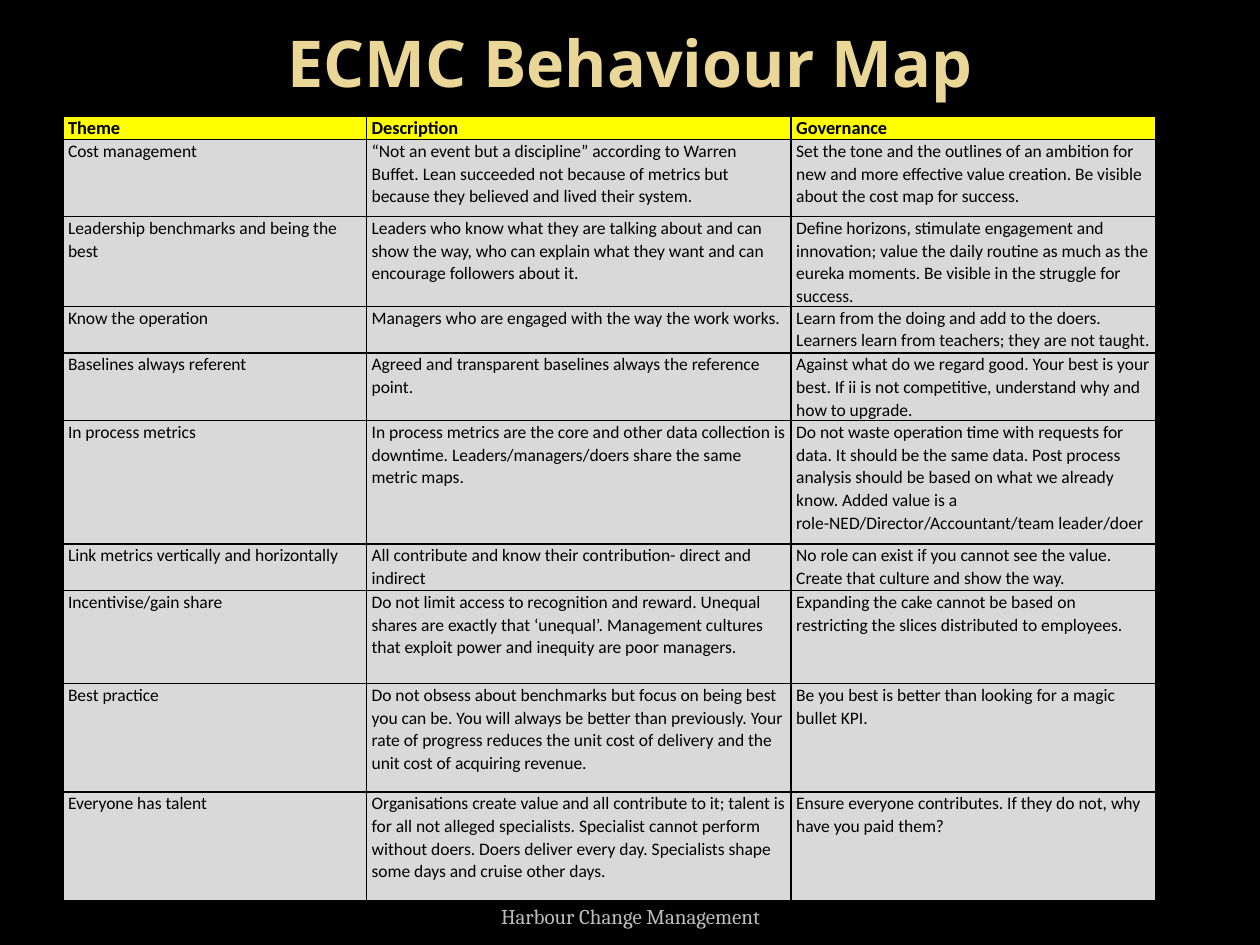
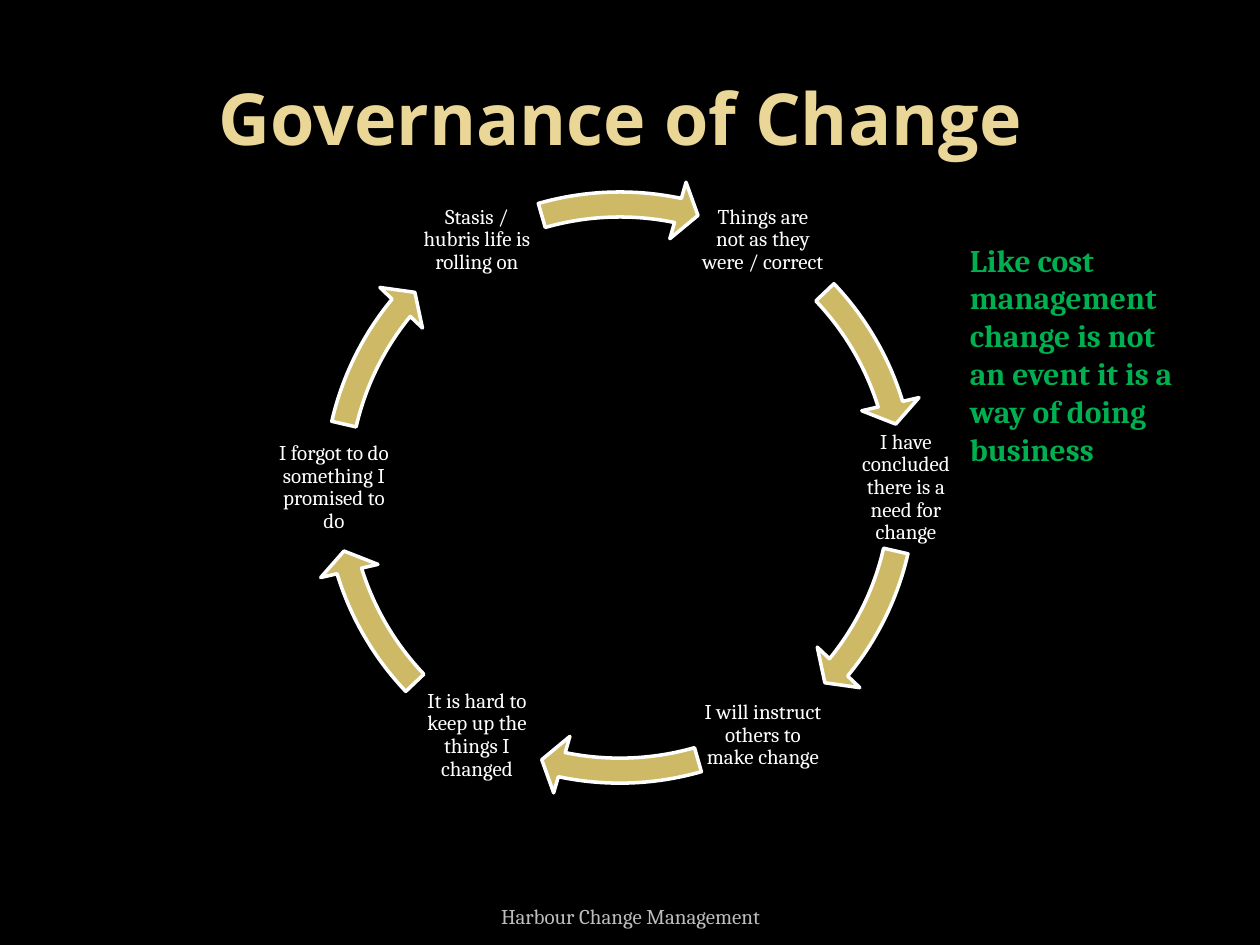
from math import cos, radians, sin

from lxml import etree
from pptx import Presentation
from pptx.dml.color import RGBColor
from pptx.enum.shapes import MSO_SHAPE
from pptx.enum.text import MSO_ANCHOR, PP_ALIGN
from pptx.oxml.ns import qn
from pptx.util import Inches, Pt

CIRCULAR_ARROW = MSO_SHAPE.CIRCULAR_ARROW
TOP, MIDDLE, BOTTOM = MSO_ANCHOR.TOP, MSO_ANCHOR.MIDDLE, MSO_ANCHOR.BOTTOM
LEFT, CENTER = PP_ALIGN.LEFT, PP_ALIGN.CENTER

# Colours
BLACK = RGBColor(0x00, 0x00, 0x00)
WHITE = RGBColor(0xFF, 0xFF, 0xFF)
SAND = RGBColor(0xEA, 0xD6, 0x96)
GOLD = RGBColor(0xCE, 0xB9, 0x66)
SILVER = RGBColor(0xBD, 0xBD, 0xBD)
GREEN = RGBColor(0x00, 0xB0, 0x50)
YELLOW = RGBColor(0xFF, 0xFF, 0x00)
GREY = RGBColor(0xD9, 0xD9, 0xD9)

# Text formats
TITLE = {"name": "Open Sans", "size": Pt(41), "bold": True, "color": SAND}
SMALL_TITLE = {**TITLE, "size": Pt(36.9)}
FOOTER = {"name": "Cambria", "size": Pt(12), "bold": False, "color": SILVER}
STAGE = {**FOOTER, "color": WHITE}
REMARK = {"name": "Cambria", "size": Pt(18), "bold": True, "color": GREEN}
TABLE_HEAD = {"name": "Calibri", "size": Pt(10.5), "bold": True, "color": BLACK}
TABLE_BODY = {**TABLE_HEAD, "size": Pt(10), "bold": False}

FOOTER_TEXT = "Harbour Change Management"

# Behaviour table
COLUMN_WIDTHS = [2.41, 3.37, 2.89]
ROW_HEIGHTS = [0.14, 0.61, 0.61, 0.37, 0.49, 0.98, 0.37, 0.74, 0.86, 0.86]
BEHAVIOURS = [
    ("Theme", "Description", "Governance"),
    ("Cost management",
     "“Not an event but a discipline” according to Warren Buffet. Lean succeeded "
     "not because of metrics but because they believed and lived their system.",
     "Set the tone and the outlines of an ambition for new and more effective "
     "value creation. Be visible about the cost map for success."),
    ("Leadership benchmarks and being the best",
     "Leaders who know what they are talking about and can show the way, who can "
     "explain what they want and can encourage followers about it.",
     "Define horizons, stimulate engagement and innovation; value the daily routine "
     "as much as the eureka moments. Be visible in the struggle for success."),
    ("Know the operation",
     "Managers who are engaged with the way the work works.",
     "Learn from the doing and add to the doers. Learners learn from teachers; "
     "they are not taught."),
    ("Baselines always referent",
     "Agreed and transparent baselines always the reference point.",
     "Against what do we regard good. Your best is your best. If ii is not "
     "competitive, understand why and how to upgrade."),
    ("In process metrics",
     "In process metrics are the core and other data collection is downtime. "
     "Leaders/managers/doers share the same metric maps.",
     "Do not waste operation time with requests for data. It should be the same "
     "data. Post process analysis should be based on what we already know. Added "
     "value is a role-NED/Director/Accountant/team leader/doer"),
    ("Link metrics vertically and horizontally",
     "All contribute and know their contribution- direct and indirect",
     "No role can exist if you cannot see the value. Create that culture and show "
     "the way."),
    ("Incentivise/gain share",
     "Do not limit access to recognition and reward. Unequal shares are exactly "
     "that ‘unequal’. Management cultures that exploit power and inequity are poor "
     "managers.",
     "Expanding the cake cannot be based on restricting the slices distributed to "
     "employees."),
    ("Best practice",
     "Do not obsess about benchmarks but focus on being best you can be. You will "
     "always be better than previously. Your rate of progress reduces the unit cost "
     "of delivery and the unit cost of acquiring revenue.",
     "Be you best is better than looking for a magic bullet KPI."),
    ("Everyone has talent",
     "Organisations create value and all contribute to it; talent is for all not "
     "alleged specialists. Specialist cannot perform without doers. Doers deliver "
     "every day. Specialists shape some days and cruise other days.",
     "Ensure everyone contributes. If they do not, why have you paid them?"),
]

# Change cycle, clockwise from the upper right
STAGES = [
    "Things are not as they were / correct",
    "I have concluded there is a need for change",
    "I will instruct others to make change",
    "It is hard to keep up the things I changed",
    "I forgot to do something I promised to do",
    "Stasis / hubris life is rolling on",
]
CYCLE_X, CYCLE_Y, CYCLE_RADIUS = 4.92, 3.87, 2.27
STAGE_SIZE, RING_SIZE = 1.02, 4.96
# Start and end degrees of three arrows; the other half is turned by 180
ARROW_SPANS = [(316.4, 342.87), (12.95, 39.43), (73.99, 101.84)]
ADJUST_PER_DEGREE = 0.6


def write(paragraph, text, style):
    run = paragraph.add_run()
    run.text = text
    for key, value in style.items():
        if key == "color":
            run.font.color.rgb = value
        else:
            setattr(run.font, key, value)


def add_text(slide, text, box, style, anchor=MIDDLE, align=CENTER,
             margin=None, line_spacing=None):
    frame = slide.shapes.add_textbox(*map(Inches, box)).text_frame
    frame.word_wrap = True
    frame.vertical_anchor = anchor
    if margin is not None:
        for side in ("left", "right", "top", "bottom"):
            setattr(frame, f"margin_{side}", Inches(margin))
    paragraph = frame.paragraphs[0]
    paragraph.alignment = align
    paragraph.line_spacing = line_spacing
    write(paragraph, text, style)


def add_slide(presentation, title, title_height, title_style):
    """Black slide with the shared title and footer."""
    slide = presentation.slides.add_slide(presentation.slide_layouts[6])
    slide.background.fill.solid()
    slide.background.fill.fore_color.rgb = BLACK
    add_text(slide, title, (0.5, 0.3, 9, title_height), title_style)
    add_text(slide, FOOTER_TEXT, (3.42, 7.02, 3.17, 0.4), FOOTER, BOTTOM)
    return slide


def add_borders(cell):
    properties = cell._tc.get_or_add_tcPr()
    for side in ("a:lnL", "a:lnR", "a:lnT", "a:lnB"):
        line = etree.SubElement(properties, qn(side), w=str(Pt(1)))
        fill = etree.SubElement(line, qn("a:solidFill"))
        etree.SubElement(fill, qn("a:srgbClr"), val=str(BLACK))


def fill_cell(cell, text, style, color):
    add_borders(cell)
    cell.fill.solid()
    cell.fill.fore_color.rgb = color
    cell.margin_left = cell.margin_right = Inches(0.04)
    cell.margin_top = cell.margin_bottom = 0
    paragraph = cell.text_frame.paragraphs[0]
    paragraph.line_spacing = 1.07
    paragraph.space_after = Pt(8)
    write(paragraph, text, style)


def add_behaviour_table(slide):
    box = (0.5, 0.92, sum(COLUMN_WIDTHS), sum(ROW_HEIGHTS))
    table = slide.shapes.add_table(
        len(BEHAVIOURS), len(COLUMN_WIDTHS), *map(Inches, box)).table
    for column, width in zip(table.columns, COLUMN_WIDTHS):
        column.width = Inches(width)
    for row_index, (row, height) in enumerate(zip(table.rows, ROW_HEIGHTS)):
        row.height = Inches(height)
        style, color = (TABLE_BODY, GREY) if row_index else (TABLE_HEAD, YELLOW)
        for cell, text in zip(row.cells, BEHAVIOURS[row_index]):
            fill_cell(cell, text, style, color)


def add_cycle_arrow(slide, start, end):
    box = (CYCLE_X - RING_SIZE / 2, CYCLE_Y - RING_SIZE / 2, RING_SIZE, RING_SIZE)
    arrow = slide.shapes.add_shape(CIRCULAR_ARROW, *map(Inches, box))
    adjustments = (0.04, 2.505, end * ADJUST_PER_DEGREE,
                   start * ADJUST_PER_DEGREE, 0.047)
    for index, value in enumerate(adjustments):
        arrow.adjustments[index] = value
    arrow.shadow.inherit = False
    arrow.fill.solid()
    arrow.fill.fore_color.rgb = GOLD
    arrow.line.color.rgb = WHITE
    arrow.line.width = Pt(2)


def add_change_cycle(slide):
    for index, text in enumerate(STAGES):
        angle = radians(60 * index - 60)
        left = CYCLE_X + CYCLE_RADIUS * cos(angle) - STAGE_SIZE / 2
        top = CYCLE_Y + CYCLE_RADIUS * sin(angle) - STAGE_SIZE / 2
        add_text(slide, text, (left, top, STAGE_SIZE, STAGE_SIZE), STAGE,
                 margin=0.02, line_spacing=0.9)
        half, position = divmod(index, len(ARROW_SPANS))
        start, end = [(degrees + 180 * half) % 360
                      for degrees in ARROW_SPANS[position]]
        add_cycle_arrow(slide, start, end)


def main():
    presentation = Presentation()
    presentation.slide_width = Inches(10)
    presentation.slide_height = Inches(7.5)

    # Behaviour map
    slide = add_slide(presentation, "ECMC Behaviour Map", 0.38, SMALL_TITLE)
    add_behaviour_table(slide)

    # Governance cycle
    slide = add_slide(presentation, "Governance of Change ", 1.25, TITLE)
    add_change_cycle(slide)
    add_text(slide, "Like cost management change is not an event it is a way of "
             "doing business", (7.6, 1.86, 1.97, 1.92), REMARK, TOP, LEFT)

    presentation.save("out.pptx")


if __name__ == "__main__":
    main()
